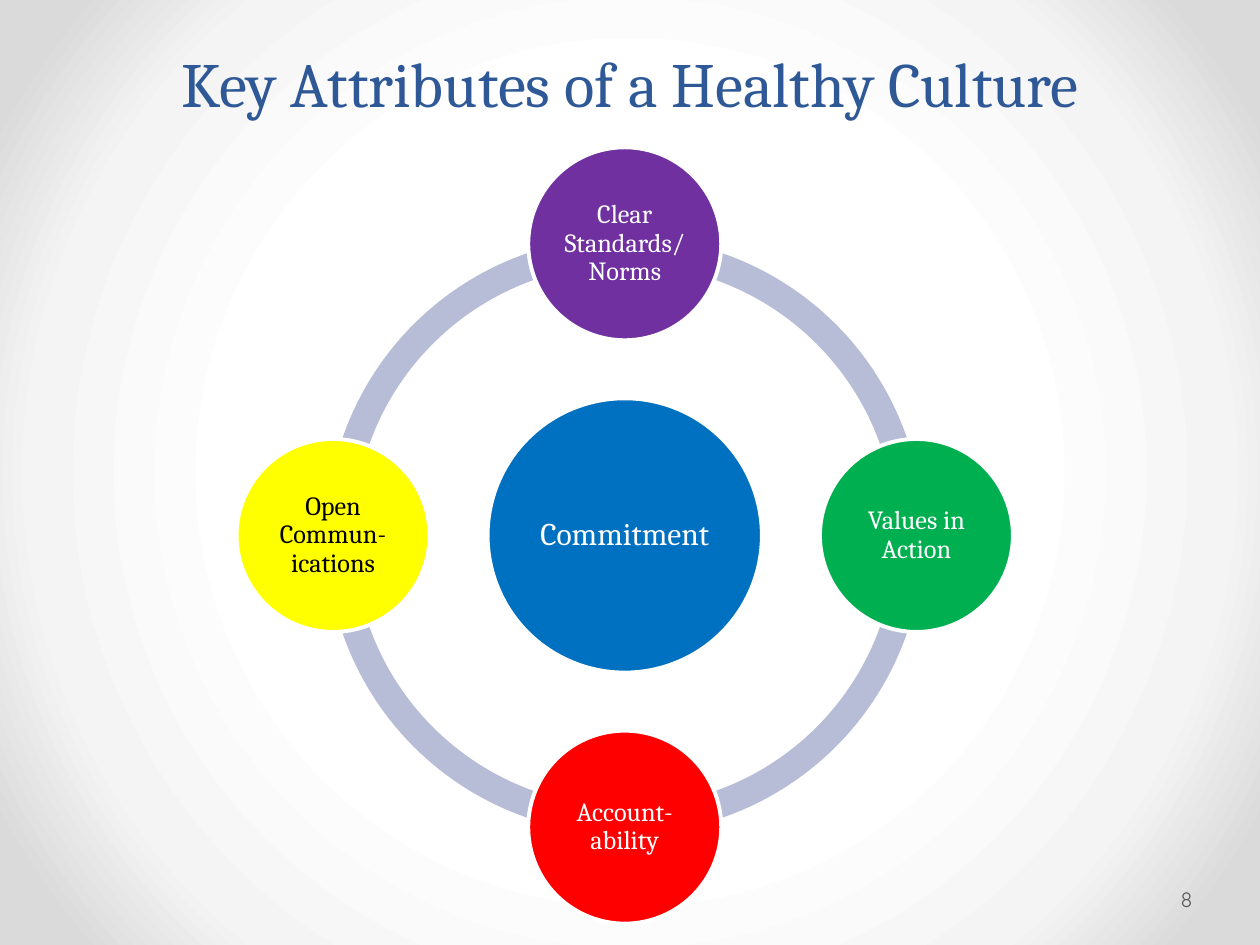
import math
from dataclasses import dataclass

import pptx
import pptx.dml.color
import pptx.enum.shapes
import pptx.enum.text
import pptx.oxml
import pptx.oxml.ns
import pptx.util
from pptx.util import Cm

SHAPES = pptx.enum.shapes.MSO_SHAPE
ALIGN = pptx.enum.text.PP_ALIGN
ANCHOR = pptx.enum.text.MSO_ANCHOR


@dataclass(frozen=True)
class Theme:
    font: str = "Cambria"
    number_font: str = "Quicksand"
    title: str = "2F5897"
    ring: str = "B7BDD6"
    hub: str = "0070C0"
    light: str = "FFFFFF"
    dark: str = "000000"
    number: str = "595959"
    backdrop: tuple = ((50, "FFFFFF"), (76, "F4F4F4"), (92, "DADADA"))
    title_size: int = 36
    hub_size: int = 18
    node_size: int = 15
    number_size: int = 12


THEME = Theme()

ATTRIBUTES = [
    ("Clear Standards/\vNorms", "7030A0", THEME.light),
    ("Values in Action", "00B050", THEME.light),
    ("Account-\vability", "FF0000", THEME.light),
    ("Open Commun-ications", "FFFF00", THEME.dark),
]


def rgb(value):
    return pptx.dml.color.RGBColor.from_string(value)


def write(shape, text, size, color, font=THEME.font, align=ALIGN.CENTER,
          anchor=ANCHOR.MIDDLE, spacing=None):
    frame = shape.text_frame
    frame.text = text
    frame.word_wrap = True
    frame.auto_size = pptx.enum.text.MSO_AUTO_SIZE.NONE
    frame.vertical_anchor = anchor
    para = frame.paragraphs[0]
    para.alignment = align
    para.line_spacing = spacing
    for span in para.runs:
        span.font.name = font
        span.font.size = pptx.util.Pt(size)
        span.font.color.rgb = rgb(color)


def paint_background(page):
    page.background.fill.gradient()
    old = page.background._cSld.find(".//" + pptx.oxml.ns.qn("a:gradFill"))
    stops = "".join(
        f'<a:gs pos="{place * 1000}"><a:srgbClr val="{color}"/></a:gs>'
        for place, color in THEME.backdrop)
    new = pptx.oxml.parse_xml(
        f'<a:gradFill {pptx.oxml.ns.nsdecls("a")} rotWithShape="1">'
        f'<a:gsLst>{stops}</a:gsLst><a:path path="circle">'
        '<a:fillToRect l="50000" t="50000" r="50000" b="50000"/>'
        '</a:path></a:gradFill>')
    old.getparent().replace(old, new)


def place_title(page, left, top, width, height):
    title = page.shapes.title
    title.left, title.top = Cm(left), Cm(top)
    title.width, title.height = Cm(width), Cm(height)
    write(title, "Key Attributes of a Healthy Culture", THEME.title_size,
          THEME.title, anchor=ANCHOR.BOTTOM, spacing=pptx.util.Pt(58))


def add_round(group, kind, center_x, center_y, diameter, fill):
    shape = group.shapes.add_shape(
        kind, Cm(center_x - diameter / 2), Cm(center_y - diameter / 2),
        Cm(diameter), Cm(diameter))
    shape.shadow.inherit = False
    shape.fill.solid()
    shape.fill.fore_color.rgb = rgb(fill)
    shape.line.fill.background()
    return shape


def add_disc(group, center_x, center_y, diameter, fill, text, size, color):
    disc = add_round(group, SHAPES.OVAL, center_x, center_y, diameter, fill)
    disc.line.color.rgb = rgb(THEME.light)
    disc.line.width = pptx.util.Pt(2.25)
    frame = disc.text_frame
    frame.margin_left = frame.margin_right = Cm(0.05)
    frame.margin_top = frame.margin_bottom = Cm(0.05)
    write(disc, text, size, color, spacing=0.9)


def place_cycle(page, left, top, side):
    group = page.shapes.add_group_shape()
    center_x, center_y = left + side / 2, top + side / 2
    node = 3.89
    orbit = (side - node) / 2
    quarter = 54
    count = len(ATTRIBUTES)
    for index in range(count):
        arc = add_round(group, SHAPES.BLOCK_ARC, center_x, center_y, 12.04,
                        THEME.ring)
        arc.adjustments[0] = quarter * index
        arc.adjustments[1] = quarter * ((index + 1) % count)
        arc.adjustments[2] = 0.046
    add_disc(group, center_x, center_y, 5.53, THEME.hub, "Commitment",
             THEME.hub_size, THEME.light)
    for index, (text, fill, color) in enumerate(ATTRIBUTES):
        angle = math.tau * index / count
        add_disc(group, center_x + orbit * math.sin(angle),
                 center_y - orbit * math.cos(angle), node, fill, text,
                 THEME.node_size, color)


def place_number(page, left, top, width, height):
    box = page.shapes.add_textbox(Cm(left), Cm(top), Cm(width), Cm(height))
    box.text_frame.margin_left = Cm(0.08)
    box.text_frame.margin_right = Cm(0.13)
    write(box, "8", THEME.number_size, THEME.number, font=THEME.number_font,
          align=ALIGN.LEFT)


def main():
    deck = pptx.Presentation()
    deck.slide_width, deck.slide_height = Cm(25.4), Cm(19.05)
    page = deck.slides.add_slide(deck.slide_layouts[5])
    paint_background(page)
    place_title(page, 1.27, 0, 22.86, 2.54)
    place_cycle(page, 4.77, 2.97, 15.65)
    place_number(page, 23.72, 17.65, 1.45, 0.97)
    deck.save("out.pptx")


if __name__ == "__main__":
    main()
